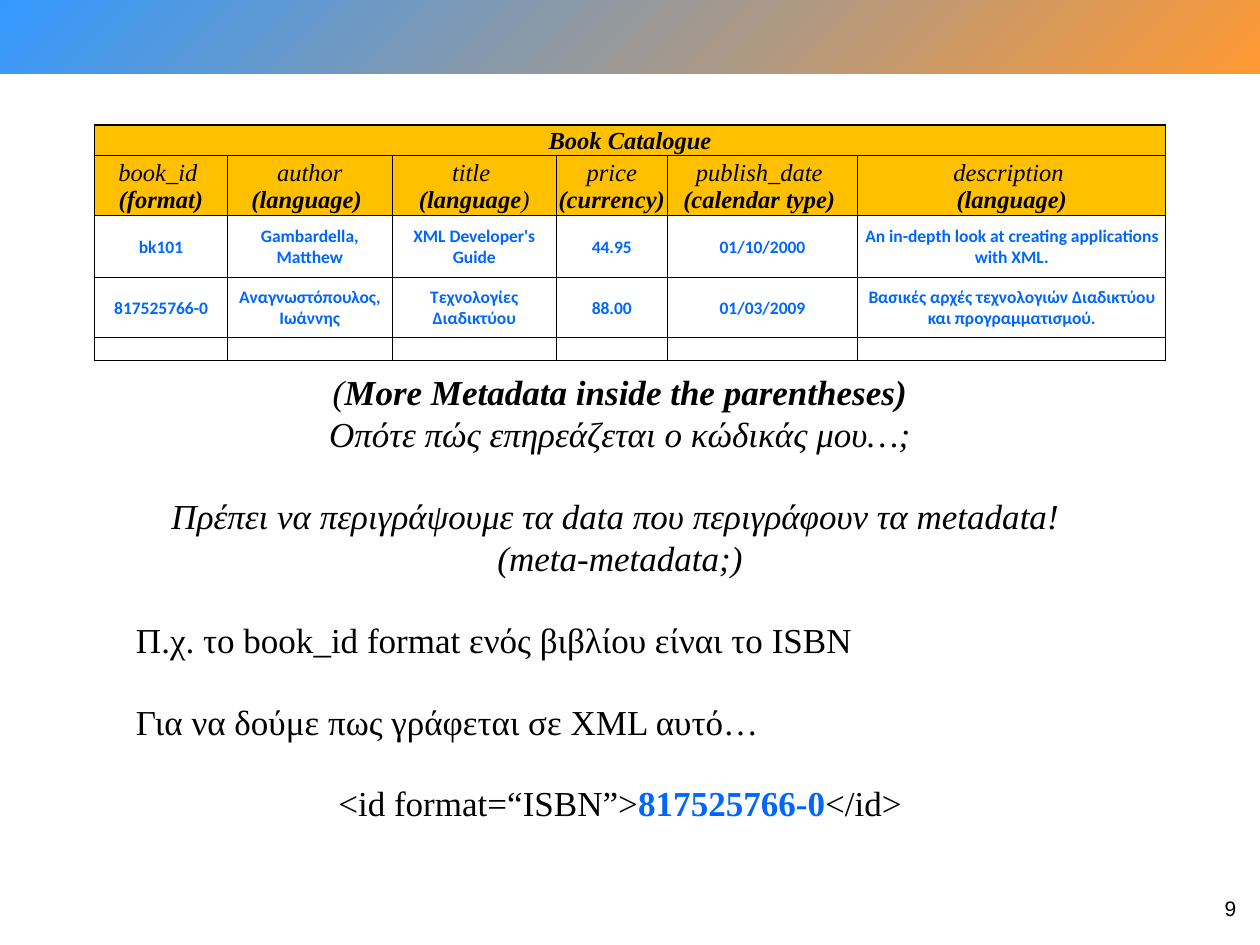
"""Build the book catalogue metadata slide."""
from lxml import etree
from pptx import Presentation
from pptx.dml.color import RGBColor
from pptx.enum.shapes import MSO_SHAPE
from pptx.enum.text import MSO_ANCHOR, PP_ALIGN
from pptx.oxml.ns import qn
from pptx.util import Pt

CENTER, LEFT, RIGHT = PP_ALIGN.CENTER, PP_ALIGN.LEFT, PP_ALIGN.RIGHT
MIDDLE = MSO_ANCHOR.MIDDLE
RECT = MSO_SHAPE.RECTANGLE

COLORS = {"black": "000000", "blue": "0066FF", "gold": "FFC000",
          "band_start": "3399FF", "band_end": "FF9933"}
SERIF, SANS, BODY = "Times New Roman", "Arial", "Calibri"

TITLE = "Book Catalogue"
HEADERS = [
    [[("book_id ", False)], [("(format)", True)]],
    [[("author ", False), ("(language) ", True)]],
    [[("title ", False)], [("(language", True), (")", False)]],
    [[("price ", False), ("(currency)", True)]],
    [[("publish_date ", False)], [("(calendar type) ", True)]],
    [[("description ", False)], [("(language)", True)]],
]
BOOKS = [
    ["bk101", "Gambardella, Matthew", "XML Developer's Guide", "44.95",
     "01/10/2000", "An in-depth look at creating applications with XML."],
    ["817525766-0", "Αναγνωστόπουλος, Ιωάννης", "Τεχνολογίες Διαδικτύου",
     "88.00", "01/03/2009",
     "Βασικές αρχές τεχνολογιών Διαδικτύου και προγραμματισμού."],
    [""] * 6,
]
COL_WIDTHS = [76, 94, 94, 63.2, 109, 176]
ROW_HEIGHTS = [17.2, 34.2, 35.4, 34.4, 12.4]

PLAIN, ITALIC = {}, {"italic": True}
STRONG = {"bold": True, "italic": True}
ID = {"bold": True, "color": "blue"}
LINE_GAP, SECTION_GAP = 4.6, 27.6
NOTES = [
    (CENTER, LINE_GAP, [("(", ITALIC),
                        ("More Metadata inside the parentheses)", STRONG)]),
    (CENTER, LINE_GAP, [("Οπότε πώς επηρεάζεται ο κώδικάς μου…;", ITALIC)]),
    (CENTER, SECTION_GAP,
     [("Πρέπει να περιγράψουμε τα data που περιγράφουν τα metadata! ", ITALIC)]),
    (CENTER, LINE_GAP, [("(meta-metadata;)", ITALIC)]),
    (LEFT, SECTION_GAP,
     [("Π.χ. το book_id format ενός βιβλίου είναι το ISBN", PLAIN)]),
    (LEFT, SECTION_GAP, [("Για να δούμε πως γράφεται σε XML αυτό…", PLAIN)]),
    (CENTER, SECTION_GAP, [("<id format=“ISBN”>", PLAIN),
                           ("817525766-0", ID), ("</id>", PLAIN)]),
]


def rgb(name):
    return RGBColor.from_string(COLORS[name])


def add_run(p, text, font, size, bold=False, italic=False, color="black"):
    r = p.add_run()
    r.text = text
    r.font.name, r.font.size = font, Pt(size)
    r.font.bold, r.font.italic = bold, italic
    r.font.color.rgb = rgb(color)


def next_paragraph(tf, i, align):
    p = tf.add_paragraph() if i else tf.paragraphs[0]
    p.alignment = align
    return p


def add_text_box(s, left, top, width, height):
    tf = s.shapes.add_textbox(Pt(left), Pt(top), Pt(width), Pt(height)).text_frame
    tf.word_wrap = True
    return tf


def set_borders(cell, **widths):
    tc_pr = cell._tc.get_or_add_tcPr()
    for i, (side, width) in enumerate(widths.items()):
        ln = etree.Element(qn(f"a:ln{side}"), w=str(Pt(width)))
        fill = etree.SubElement(ln, qn("a:solidFill"))
        etree.SubElement(fill, qn("a:srgbClr"), val=COLORS["black"])
        tc_pr.insert(i, ln)


def fill_cell(cell, paragraphs, font, size, italic, color):
    for i, runs in enumerate(paragraphs):
        p = next_paragraph(cell.text_frame, i, CENTER)
        for text, bold in runs:
            if text:
                add_run(p, text, font, size, bold, italic, color)
            else:
                etree.SubElement(p._p, qn("a:endParaRPr"), sz=str(size * 100))


def add_band(s):
    sp = s.shapes.add_shape(RECT, 0, 0, Pt(720), Pt(42))
    sp.shadow.inherit = False
    sp.line.fill.background()
    sp.fill.gradient()
    sp.fill.gradient_angle = 315
    for stop, name in zip(sp.fill.gradient_stops, ("band_start", "band_end")):
        stop.color.rgb = rgb(name)


def add_catalogue(s):
    rows, cols = len(ROW_HEIGHTS), len(COL_WIDTHS)
    table = s.shapes.add_table(rows, cols, Pt(54), Pt(71.4), Pt(sum(COL_WIDTHS)),
                               Pt(sum(ROW_HEIGHTS))).table
    for col, width in zip(table.columns, COL_WIDTHS):
        col.width = Pt(width)
    for row, height in zip(table.rows, ROW_HEIGHTS):
        row.height = Pt(height)
    title_row = [[[(TITLE, True)]]] + [[]] * (cols - 1)
    book_rows = [[[[(text, True)]] for text in book] for book in BOOKS]
    for y, row in enumerate([title_row, HEADERS] + book_rows):
        style = (SERIF, 14, True, "black") if y < 2 else (BODY, 10, False, "blue")
        for x, paragraphs in enumerate(row):
            cell = table.cell(y, x)
            cell.vertical_anchor = MIDDLE
            cell.margin_left = cell.margin_right = cell.margin_top = Pt(0.7)
            cell.margin_bottom = 0
            fill_cell(cell, paragraphs, *style)
            if y < 2:
                cell.fill.solid()
                cell.fill.fore_color.rgb = rgb("gold")
            else:
                cell.fill.background()
            set_borders(cell, L=1 if x == 0 else 0.5,
                        R=1 if x == cols - 1 or y == 0 else 0.5,
                        T=1 if y in (0, 2) else 0.5, B=1 if y == 1 else 0.5)
    table.cell(0, 0).merge(table.cell(0, cols - 1))


def add_notes_text(s):
    tf = add_text_box(s, 70.6, 213, 567.4, 317.5)
    for i, (align, gap, runs) in enumerate(NOTES):
        p = next_paragraph(tf, i, align)
        p.line_spacing, p.space_before = 0.8, Pt(gap)
        for text, style in runs:
            add_run(p, text, SERIF, 20, **style)


def main():
    prs = Presentation()
    prs.slide_width, prs.slide_height = Pt(720), Pt(540)
    s = prs.slides.add_slide(prs.slide_layouts[6])
    add_band(s)
    tf = add_text_box(s, 683, 508.3, 30.5, 28.8)
    add_run(next_paragraph(tf, 0, RIGHT), "9", SANS, 12)
    add_catalogue(s)
    add_notes_text(s)
    prs.save("out.pptx")


if __name__ == "__main__":
    main()
